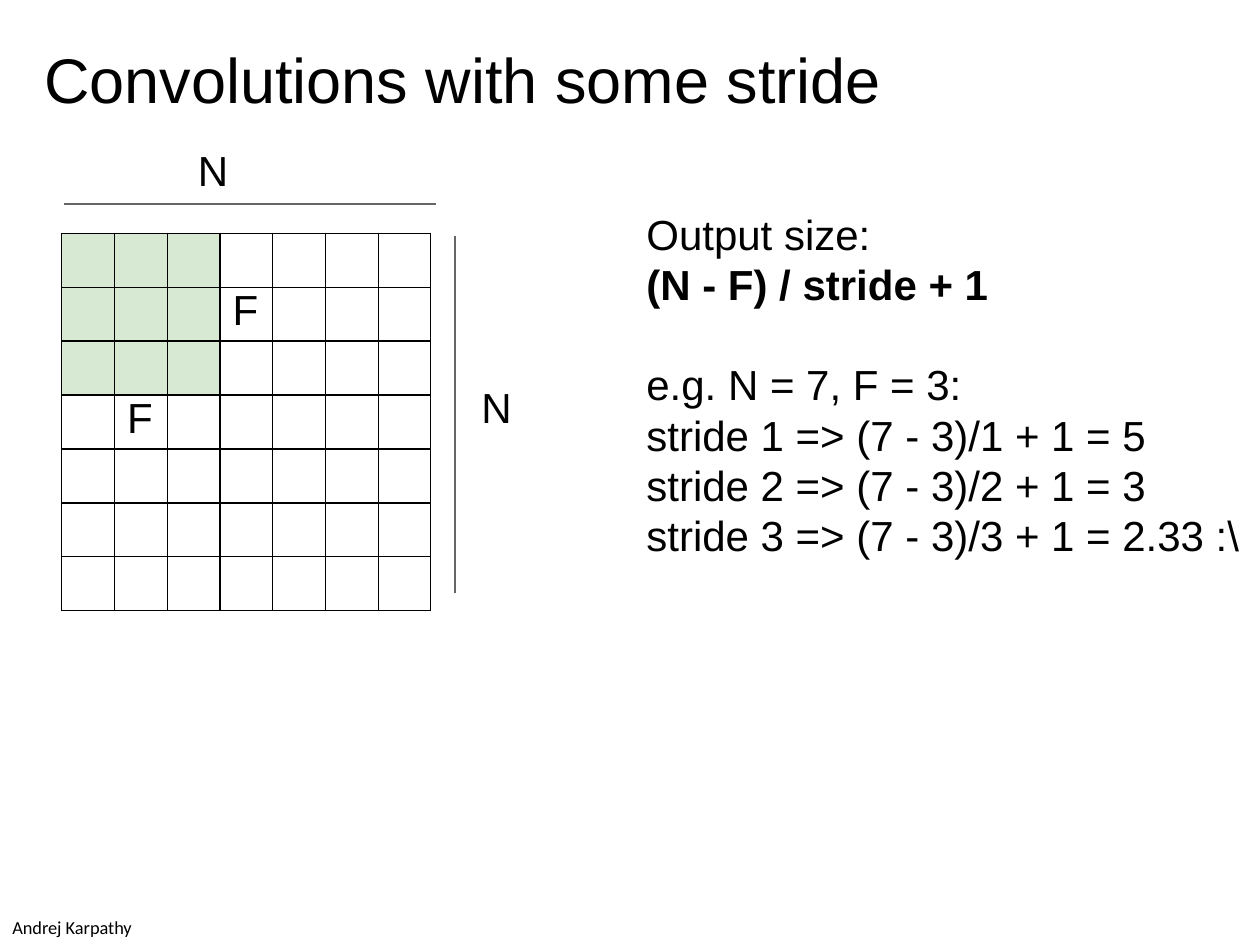
from lxml.etree import SubElement as Sub
from pptx import Presentation
from pptx.dml.color import RGBColor
from pptx.enum.shapes import MSO_CONNECTOR as Link
from pptx.enum.text import MSO_ANCHOR as Anchor, MSO_AUTO_SIZE as Fit
from pptx.oxml.ns import qn
from pptx.util import Inches, Pt

BLACK = RGBColor(0x00, 0x00, 0x00)
GREY = RGBColor(0x66, 0x66, 0x66)
GREEN = RGBColor(0xD8, 0xE9, 0xD3)
COLS, ROWS = 100, 75
WIDE, HIGH = Inches(10), Inches(7.5)
SIZE, SPAN = 7, 3
LINES = ["Output size:", "(N - F) / stride + 1", "e.g. N = 7, F = 3:",
         "stride 1 => (7 - 3)/1 + 1 = 5", "stride 2 => (7 - 3)/2 + 1 = 3",
         "stride 3 => (7 - 3)/3 + 1 = 2.33 :\\"]


def grid(*spots):
    """Turn alternating column and row counts into slide lengths."""
    units = (WIDE / COLS, HIGH / ROWS)
    return [round(n * units[i % 2]) for i, n in enumerate(spots)]


def place(shape, *spots):
    """Move and size a shape on the grid."""
    shape.left, shape.top, shape.width, shape.height = grid(*spots)
    return shape


def write(frame, *lines, size=24, face="Arial", pad=(0, 0), wrap=True, pitch=None):
    """Fill a text frame with plain left-aligned lines."""
    frame.text = "\n".join(lines)
    frame.word_wrap = wrap
    frame.auto_size = Fit.NONE
    frame.vertical_anchor = Anchor.TOP
    frame.margin_left = frame.margin_right = Inches(pad[0])
    frame.margin_top = frame.margin_bottom = Inches(pad[1])
    for para in frame.paragraphs:
        para.space_before = Pt(0)
        if pitch:
            para.line_spacing = Pt(pitch)
        props = para._p.get_or_add_pPr()
        props.set("marL", "0")
        props.set("indent", "0")
        props.set("algn", "l")
        Sub(props, qn("a:buNone"))
        for run in para.runs:
            font = run.font
            font.size, font.name, font.color.rgb = Pt(size), face, BLACK


def label(slide, text, *spots, **form):
    """Add a text box."""
    write(slide.shapes.add_textbox(*grid(*spots)).text_frame, text, **form)


def rule(slide, *ends):
    """Draw a grey measuring line."""
    line = slide.shapes.add_connector(Link.STRAIGHT, *grid(*ends))
    line.line.color.rgb, line.line.width = GREY, Pt(1.5)
    Sub(line._element.spPr, qn("a:effectLst"))


def edge(cell):
    """Give a cell thin black borders."""
    props = cell._tc.get_or_add_tcPr()
    for side in ("lnL", "lnR", "lnT", "lnB"):
        line = Sub(props, qn("a:" + side), w=str(Pt(0.75)))
        fill = Sub(line, qn("a:solidFill"))
        Sub(fill, qn("a:srgbClr"), val=str(BLACK))


def board(slide, marks, *spots):
    """Add the input grid with its filter shaded in the corner."""
    table = slide.shapes.add_table(SIZE, SIZE, *grid(*spots)).table
    table.first_row = table.horz_banding = False
    for row in range(SIZE):
        for col in range(SIZE):
            cell = table.cell(row, col)
            cell.margin_left = Inches(0.1)
            cell.margin_right = cell.margin_top = cell.margin_bottom = 0
            edge(cell)
            if row < SPAN and col < SPAN:
                cell.fill.solid()
                cell.fill.fore_color.rgb = GREEN
            else:
                cell.fill.background()
            if (row, col) in marks:
                run = cell.text_frame.paragraphs[0].add_run()
                run.text, font = marks[row, col], run.font
                font.size, font.name, font.color.rgb = Pt(24), "Arial", BLACK


def main():
    """Build the slide."""
    deck = Presentation()
    deck.slide_width, deck.slide_height = WIDE, HIGH
    slide = deck.slides.add_slide(deck.slide_layouts[1])
    title, body = slide.placeholders
    place(title, 2.5, 2.7, 95.1, 6.1)
    write(title.text_frame, "Convolutions with some stride", size=36, pad=(0.1, 0.05))
    place(body, 51.3, 16.6, 48, 27.9)
    write(body.text_frame, *LINES, pitch=28.6)
    paras = body.text_frame.paragraphs
    paras[1].runs[0].font.bold = True
    paras[2].space_before = Pt(28.6)
    board(slide, {(1, 3): "F", (3, 1): "F"}, 4.9, 18.5, 29.3, 30)
    rule(slide, 5.1, 16.2, 34.6, 16.2)
    rule(slide, 36.1, 18.7, 36.1, 47.1)
    label(slide, "N", 15.7, 11.5, 2.7, 4.1)
    label(slide, "N", 38.2, 30.3, 2.7, 4.1)
    label(slide, "Andrej Karpathy", 0, 72.2, 11.7, 2.8,
          size=10.5, face="Calibri", pad=(0.1, 0.05), wrap=False)
    deck.save("out.pptx")


if __name__ == "__main__":
    main()
